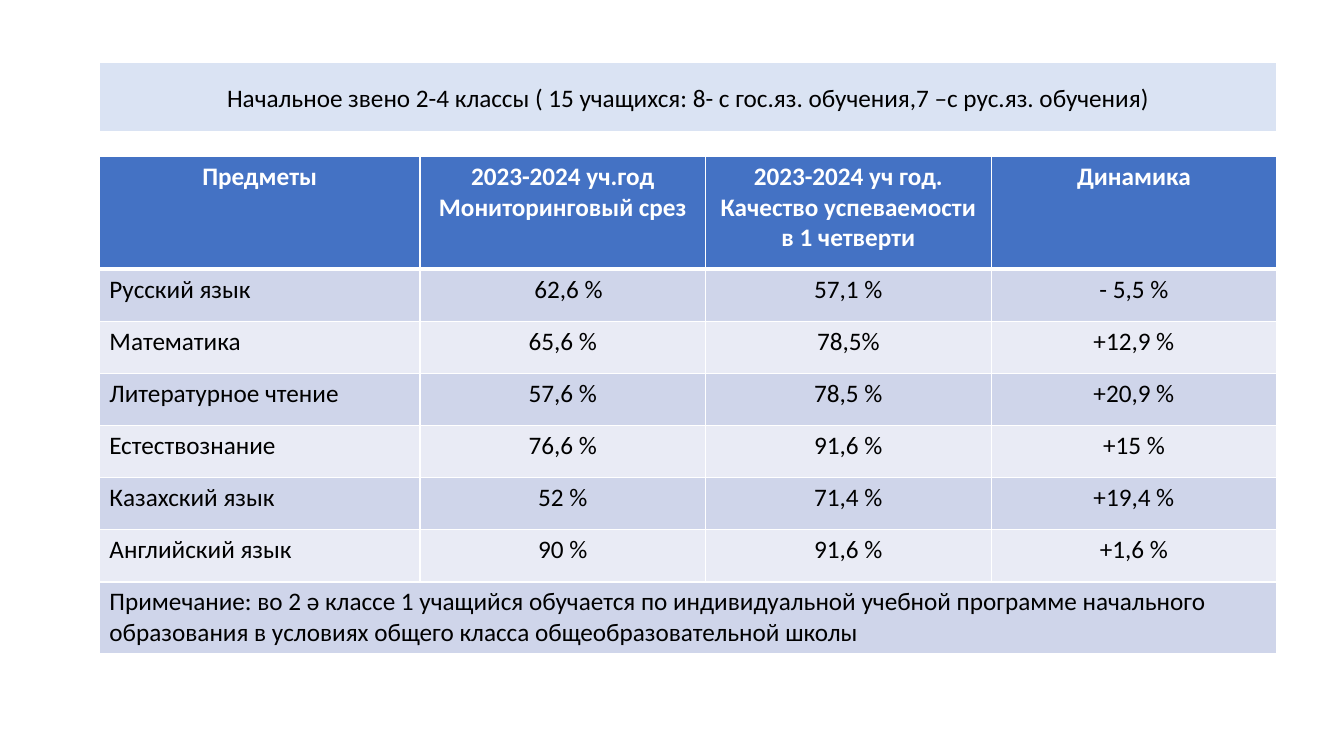
import dataclasses

import lxml.etree
import pptx
import pptx.dml.color
import pptx.enum.shapes
import pptx.enum.text
import pptx.oxml.ns
import pptx.util

Pt = pptx.util.Pt
ALIGN = pptx.enum.text.PP_ALIGN


@dataclasses.dataclass(frozen=True)
class Theme:
    font: str = "Calibri"
    size: int = 18
    text: str = "000000"
    white: str = "FFFFFF"
    heading: str = "DAE3F3"
    header: str = "4472C4"
    bands: tuple = ("CFD5EA", "E9EBF5")


THEME = Theme()
LEFT, WIDTH = 71, 841
COLUMN_WIDTHS = [229, 204, 204, 204]
ROW_HEIGHTS = [80.6] + [37.25] * 6 + [50.7]
HEADING = "Начальное звено 2-4 классы ( 15 учащихся: 8- с гос.яз. обучения,7 –с рус.яз. обучения)"
HEADER = [
    "Предметы",
    "2023-2024 уч.год\nМониторинговый срез",
    "2023-2024 уч год.\nКачество успеваемости в 1 четверти",
    "Динамика",
]
RESULTS = [
    ["Русский язык", "62,6 %", "57,1 %", "- 5,5 %"],
    ["Математика", "65,6 %", "78,5%", "+12,9 %"],
    ["Литературное чтение", "57,6 %", "78,5 %", "+20,9 %"],
    ["Естествознание", "76,6 %", "91,6 %", "+15 %"],
    ["Казахский язык", "52 %", "71,4 %", "+19,4 %"],
    ["Английский язык", "90 %", "91,6 %", "+1,6 %"],
]
NOTE = (
    "Примечание: во 2 ә классе 1 учащийся обучается по индивидуальной учебной программе "
    "начального образования в условиях общего класса общеобразовательной школы"
)


def rgb(code):
    return pptx.dml.color.RGBColor.from_string(code)


class SlideBuilder:
    """Draw themed elements on one slide, with lengths in points."""

    def __init__(self, slide, theme):
        self.slide = slide
        self.theme = theme

    def paint(self, part, color):
        part.fill.solid()
        part.fill.fore_color.rgb = rgb(color)

    def set_text(self, frame, text, color, align, bold=False):
        frame.text = text
        frame.word_wrap = True
        formats = {"name": self.theme.font, "size": Pt(self.theme.size), "bold": bold}
        for paragraph in frame.paragraphs:
            paragraph.alignment = align
            for run in paragraph.runs:
                for attribute, value in formats.items():
                    setattr(run.font, attribute, value)
                run.font.color.rgb = rgb(color)

    def banner(self, left, top, width, height, text):
        banner = self.slide.shapes.add_shape(
            pptx.enum.shapes.MSO_SHAPE.RECTANGLE, Pt(left), Pt(top), Pt(width), Pt(height)
        )
        banner.shadow.inherit = False
        self.paint(banner, self.theme.heading)
        banner.line.color.rgb = rgb(self.theme.white)
        banner.line.width = Pt(1.5)
        banner.text_frame.vertical_anchor = pptx.enum.text.MSO_ANCHOR.MIDDLE
        self.set_text(banner.text_frame, text, self.theme.text, ALIGN.CENTER)

    def borders(self, cell, **widths):
        properties = cell._tc.get_or_add_tcPr()
        qn = pptx.oxml.ns.qn
        for side in "LRTB":
            width = Pt(widths.get(side, 1))
            line = lxml.etree.SubElement(properties, qn(f"a:ln{side}"), w=str(width))
            fill = lxml.etree.SubElement(line, qn("a:solidFill"))
            lxml.etree.SubElement(fill, qn("a:srgbClr"), val=self.theme.white)

    def table(self, left, top, column_widths, row_heights, rows):
        table = self.slide.shapes.add_table(
            len(row_heights), len(column_widths), Pt(left), Pt(top),
            Pt(sum(column_widths)), Pt(sum(row_heights)),
        ).table
        for column, width in zip(table.columns, column_widths):
            column.width = Pt(width)
        for row, height in zip(table.rows, row_heights):
            row.height = Pt(height)
        for r, texts in enumerate(rows):
            is_header = r == 0
            fill = self.theme.header if is_header else self.theme.bands[(r - 1) % 2]
            color = self.theme.white if is_header else self.theme.text
            edges = {0: {"B": 3}, 1: {"T": 3}}.get(r, {})
            for c in range(len(column_widths)):
                cell = table.cell(r, c)
                self.borders(cell, **edges)
                self.paint(cell, fill)
                if c < len(texts):
                    align = ALIGN.CENTER if is_header or c else ALIGN.LEFT
                    self.set_text(cell.text_frame, texts[c], color, align, is_header)
            if len(texts) == 1:
                table.cell(r, 0).merge(table.cell(r, len(column_widths) - 1))
        return table


def main():
    presentation = pptx.Presentation()
    presentation.slide_width, presentation.slide_height = Pt(960), Pt(540)
    slide = presentation.slides.add_slide(presentation.slide_layouts[6])
    builder = SlideBuilder(slide, THEME)
    grades = builder.table(LEFT, 111.6, COLUMN_WIDTHS, ROW_HEIGHTS, [HEADER, *RESULTS, [NOTE]])
    grades.cell(1, 1).margin_left = Pt(15.4)
    builder.banner(LEFT, 44.6, WIDTH, 49.7, HEADING)
    presentation.save("out.pptx")


if __name__ == "__main__":
    main()
